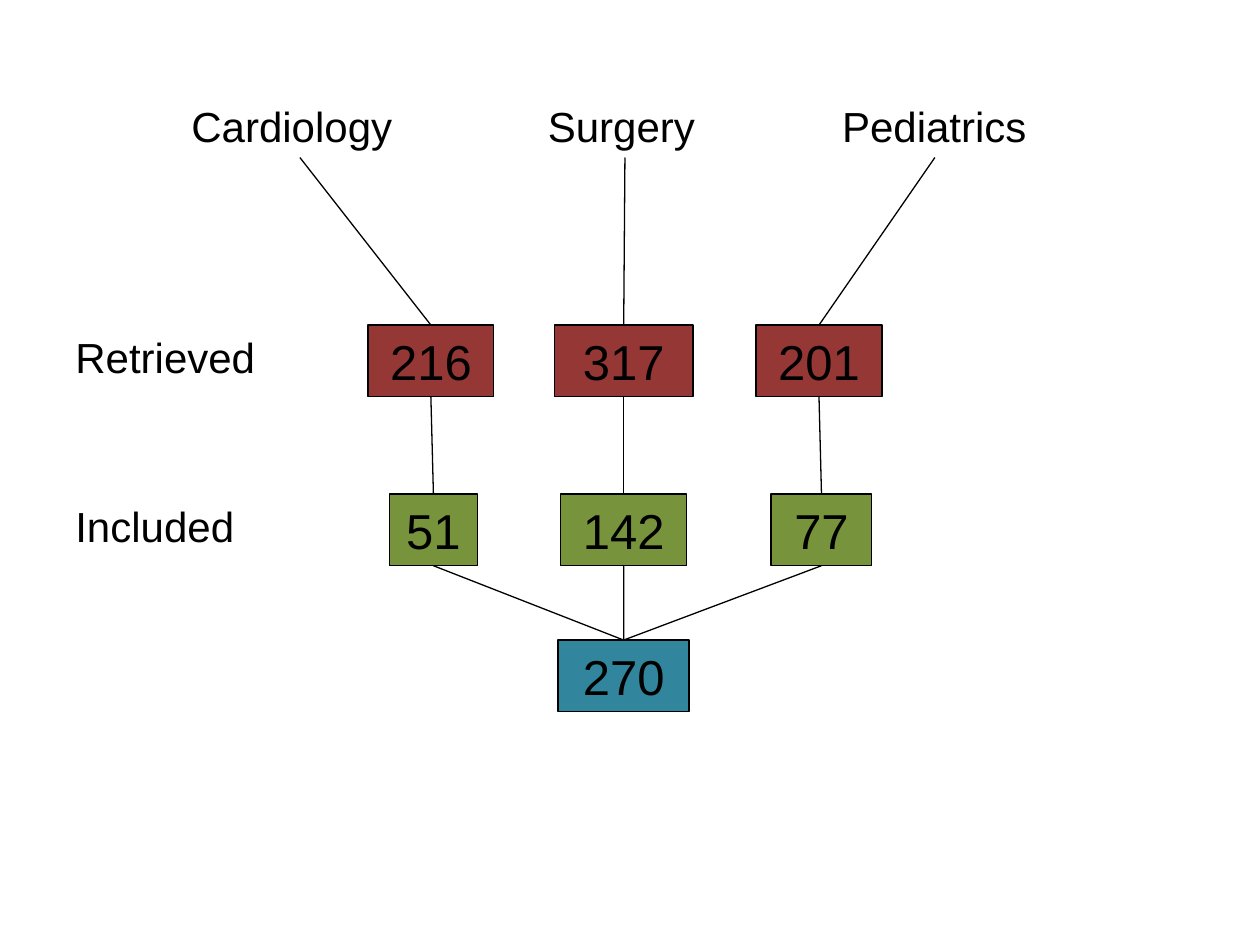
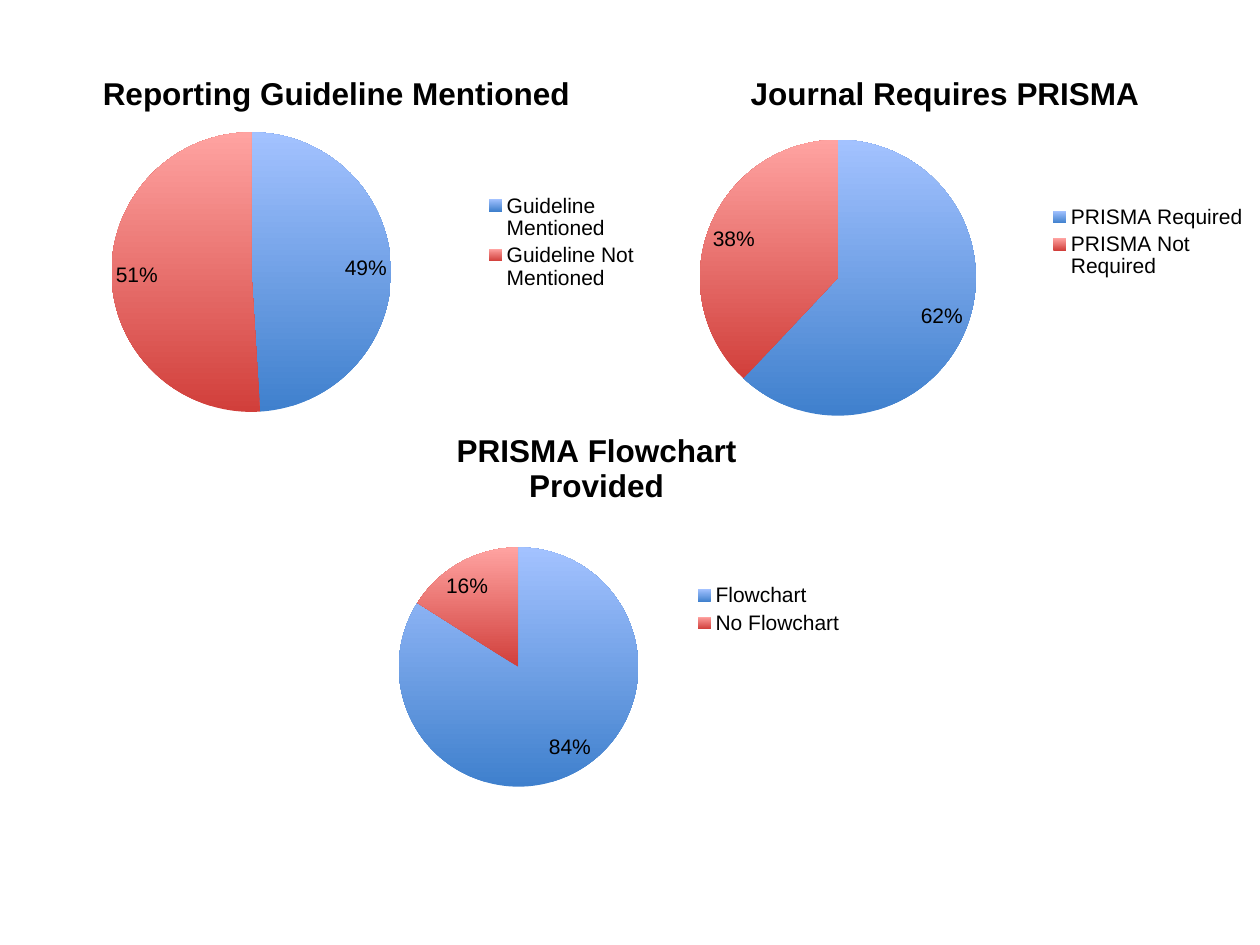
"""Build two slides: a study selection flow and three reporting guideline pies."""
from dataclasses import dataclass

from lxml import etree
from pptx import Presentation
from pptx.chart.data import CategoryChartData
from pptx.dml.color import RGBColor
from pptx.enum.chart import XL_CHART_TYPE, XL_LABEL_POSITION, XL_LEGEND_POSITION
from pptx.enum.shapes import MSO_CONNECTOR, MSO_SHAPE
from pptx.enum.text import MSO_AUTO_SIZE, PP_ALIGN
from pptx.oxml.ns import qn
from pptx.util import Inches, Pt

PIE = XL_CHART_TYPE.PIE
BEST_FIT = XL_LABEL_POSITION.BEST_FIT
LEGEND_RIGHT = XL_LEGEND_POSITION.RIGHT
STRAIGHT = MSO_CONNECTOR.STRAIGHT
RECTANGLE = MSO_SHAPE.RECTANGLE
GROW = MSO_AUTO_SIZE.SHAPE_TO_FIT_TEXT
CENTER, LEFT = PP_ALIGN.CENTER, PP_ALIGN.LEFT
TOP_SITE, BOTTOM_SITE = 0, 2


@dataclass(frozen=True)
class Theme:
    """Colours, font and type sizes of the slides."""
    font: str = "Arial"
    ink: str = "000000"
    retrieved: str = "953735"
    included: str = "77933C"
    total: str = "31859C"
    slices: tuple = (("3F80CD", "A3C2FF"), ("D13F3B", "FFA3A1"))
    label: int = 24
    count: int = 28
    chart: int = 10
    key: int = 12
    chart_title: int = 18
    rule: float = 0.75


THEME = Theme()

SPECIALTIES = [("Cardiology", 2.38, 1.92), ("Surgery", 4.96, 1.42), ("Pediatrics", 7.42, 1.67)]
STAGES = [
    ("Retrieved", 2.58, THEME.retrieved, [("216", 3.42, 1), ("317", 4.95, 1.1), ("201", 6.5, 1)]),
    ("Included", 3.92, THEME.included, [("51", 3.44, 0.7), ("142", 4.95, 1), ("77", 6.52, 0.8)]),
]
TOTAL = ("270", 4.95, 1.04)
SPECIALTY_TOP, TOTAL_TOP = 0.75, 5.08
STAGE_LEFT, STAGE_WIDTH = 0.5, 1.67
LABEL_HEIGHT, COUNT_HEIGHT = 0.5, 0.57

PIES = [
    ("Reporting Guideline Mentioned", (0.17, 0.42, 5, 3), (0.14, 0.21, 0.45, 0.74),
     {"Guideline Mentioned": 0.49, "Guideline Not Mentioned": 0.51}),
    ("PRISMA Flowchart Provided", (2.67, 3.25, 4.13, 3.17), (0.12, 0.34, 0.46, 0.61),
     {"Flowchart": 0.84, "No Flowchart": 0.16}),
    ("Journal Requires PRISMA", (5, 0.42, 5, 3), (0.11, 0.23, 0.44, 0.73),
     {"PRISMA Required": 0.62, "PRISMA Not Required": 0.38}),
]


def apply(target, **values):
    for name, value in values.items():
        setattr(target, name, value)


def style_font(font, size, bold=False):
    apply(font, name=THEME.font, size=Pt(size), bold=bold)
    font.color.rgb = RGBColor.from_string(THEME.ink)


def style_line(line):
    line.color.rgb = RGBColor.from_string(THEME.ink)
    line.width = Pt(THEME.rule)


def write(shape, wording, size, align):
    apply(shape.text_frame, text=wording, word_wrap=True, auto_size=GROW)
    paragraph = shape.text_frame.paragraphs[0]
    paragraph.alignment = align
    style_font(paragraph.runs[0].font, size)


def add_label(slide, wording, left, top, width):
    label = slide.shapes.add_textbox(*map(Inches, (left, top, width, LABEL_HEIGHT)))
    write(label, wording, THEME.label, LEFT)
    return label


def add_count(slide, count, center, width, top, colour):
    box = slide.shapes.add_shape(
        RECTANGLE, *map(Inches, (center - width / 2, top, width, COUNT_HEIGHT)))
    box.shadow.inherit = False
    box.fill.solid()
    box.fill.fore_color.rgb = RGBColor.from_string(colour)
    style_line(box.line)
    box.text_frame.vertical_anchor = None
    write(box, count, THEME.count, CENTER)
    return box


def join(slide, upper, lower):
    link = slide.shapes.add_connector(STRAIGHT, 0, 0, 0, 0)
    link.begin_connect(upper, BOTTOM_SITE)
    link.end_connect(lower, TOP_SITE)
    style_line(link.line)
    etree.SubElement(link._element.spPr, qn("a:effectLst"))


def build_flow(slide):
    above = [add_label(slide, name, center - width / 2, SPECIALTY_TOP, width)
             for name, center, width in SPECIALTIES]
    for stage, top, colour, counts in STAGES:
        add_label(slide, stage, STAGE_LEFT, top, STAGE_WIDTH)
        boxes = [add_count(slide, *count, top, colour) for count in counts]
        for upper, lower in zip(above, boxes):
            join(slide, upper, lower)
        above = boxes
    total = add_count(slide, *TOTAL, TOTAL_TOP, THEME.total)
    for upper in above:
        join(slide, upper, total)


def place_plot(chart, fractions):
    plot_area = chart._chartSpace.find(".//" + qn("c:plotArea"))
    for previous in plot_area.findall(qn("c:layout")):
        plot_area.remove(previous)
    layout = etree.Element(qn("c:layout"))
    manual = etree.SubElement(layout, qn("c:manualLayout"))
    settings = [("layoutTarget", "inner"), ("xMode", "edge"), ("yMode", "edge"),
                *zip("xywh", fractions)]
    for tag, value in settings:
        etree.SubElement(manual, qn("c:" + tag)).set("val", str(value))
    plot_area.insert(0, layout)


def add_pie(slide, title, place, plot_place, shares):
    data = CategoryChartData(number_format="0%")
    data.categories = list(shares)
    data.add_series("Series 1", list(shares.values()))
    chart = slide.shapes.add_chart(PIE, *map(Inches, place), data).chart
    style_font(chart.font, THEME.chart)

    apply(chart, has_title=True, has_legend=True)
    chart.chart_title.text_frame.text = title
    style_font(chart.chart_title.text_frame.paragraphs[0].runs[0].font, THEME.chart_title, True)
    chart.chart_title.include_in_layout = False
    apply(chart.legend, position=LEGEND_RIGHT, include_in_layout=False)
    style_font(chart.legend.font, THEME.key)

    plot = chart.plots[0]
    apply(plot, vary_by_categories=True, has_data_labels=True)
    apply(plot.data_labels, show_value=True, show_percentage=False, position=BEST_FIT,
          number_format="0%", number_format_is_linked=False)
    style_font(plot.data_labels.font, THEME.key)
    for index, shades in enumerate(THEME.slices):
        slice_format = plot.series[0].points[index].format
        slice_format.fill.gradient()
        slice_format.fill.gradient_angle = 90
        for stop, shade in zip(slice_format.fill.gradient_stops, shades):
            stop.color.rgb = RGBColor.from_string(shade)
        slice_format.line.fill.background()
    place_plot(chart, plot_place)


def build_pies(slide):
    for pie in PIES:
        add_pie(slide, *pie)


def main():
    deck = Presentation()
    apply(deck, slide_width=Inches(10), slide_height=Inches(7.5))
    blank = deck.slide_layouts[6]
    for build in (build_flow, build_pies):
        build(deck.slides.add_slide(blank))
    deck.save("out.pptx")


if __name__ == "__main__":
    main()
